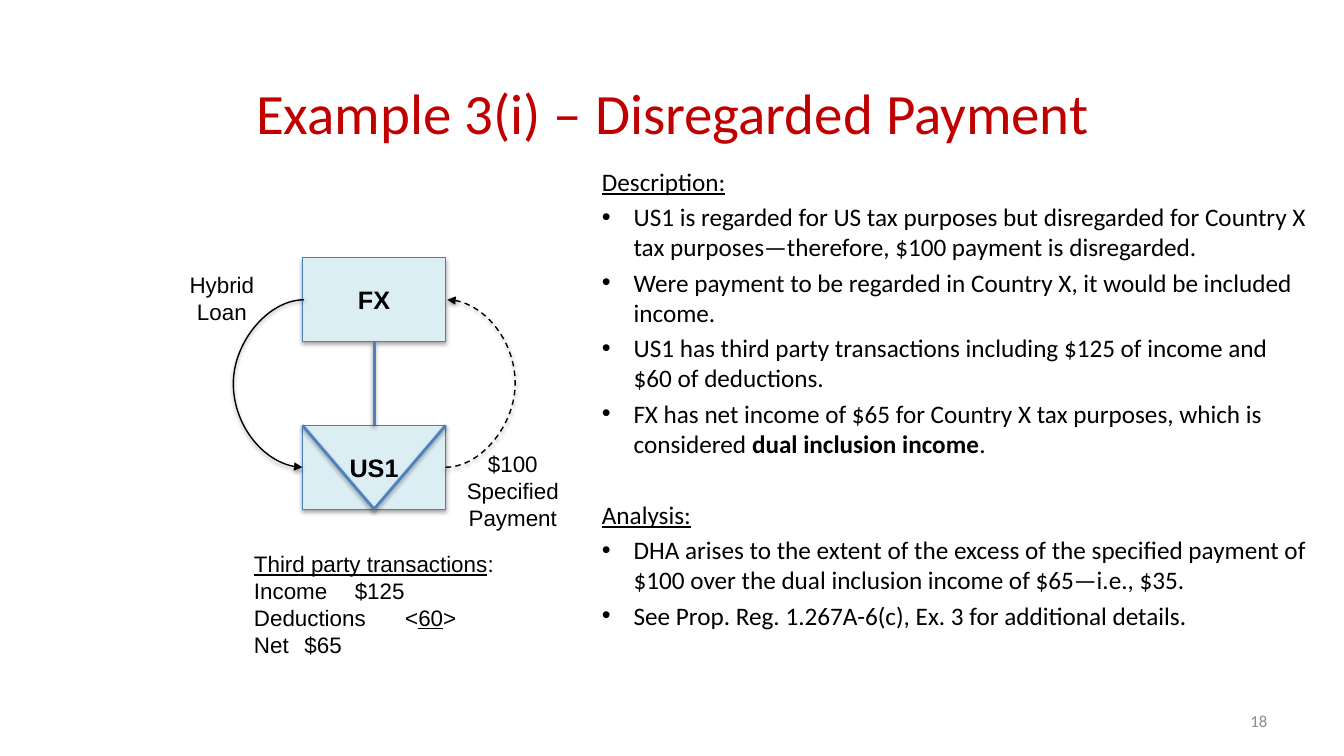
from dataclasses import dataclass

from lxml import etree
from pptx import Presentation
from pptx.dml.color import RGBColor
from pptx.enum import dml, shapes, text
from pptx.oxml import ns
from pptx.util import Cm, Pt

INK, RED, GREY = "000000", "C00000", "8C8C8C"
BLUE, EDGE, PALE = "4F81BD", "4B7EBC", "DBEEF4"
LEFT, MID, RIGHT = text.PP_ALIGN.LEFT, text.PP_ALIGN.CENTER, text.PP_ALIGN.RIGHT
TOP, HALF = text.MSO_ANCHOR.TOP, text.MSO_ANCHOR.MIDDLE


@dataclass
class Para:
    """Paragraph text; _x_ underlines x and *x* makes it bold."""
    words: str
    bullet: bool = False
    before: float = 0
    tab: float = 0


@dataclass
class Style:
    face: str = "Arial"
    size: float = 16
    tone: str = INK
    bold: bool = False
    align: text.PP_ALIGN = MID
    anchor: text.MSO_ANCHOR = TOP


@dataclass
class Label:
    area: tuple
    paras: list
    style: Style


@dataclass
class Link:
    start: tuple
    end: tuple
    tone: str = BLUE
    width: float = 2
    swing: float = 0
    dash: bool = False


def color(code: str) -> RGBColor:
    return RGBColor.from_string(code)


def add(parent, tag: str, **attrs):
    node = etree.SubElement(parent, ns.qn(tag))
    for key, value in attrs.items():
        node.set(key, str(value))
    return node


def shade(shape, alpha: int, dist: float) -> None:
    spot = add(add(shape.element.spPr, "a:effectLst"), "a:outerShdw",
               blurRad=Pt(3.1), dist=Pt(dist), dir=90 * 60000, rotWithShape=0)
    add(add(spot, "a:srgbClr", val=INK), "a:alpha", val=alpha * 1000)


def write(frame, paras: list, style: Style) -> None:
    frame.word_wrap = True
    frame.auto_size = text.MSO_AUTO_SIZE.NONE
    frame.vertical_anchor = style.anchor
    for i, item in enumerate(paras):
        para = frame.add_paragraph() if i else frame.paragraphs[0]
        para.alignment = style.align
        para.space_before = Pt(item.before)
        props = para._p.get_or_add_pPr()
        props.set("marL", str(Cm(0.8 if item.bullet else 0)))
        props.set("indent", str(Cm(-0.8 if item.bullet else 0)))
        if item.bullet:
            add(props, "a:buFont", typeface="Arial")
            add(props, "a:buChar", char="•")
        else:
            add(props, "a:buNone")
        if item.tab:
            add(add(props, "a:tabLst"), "a:tab", pos=Cm(item.tab), algn="l")
        font = para.font
        font.name, font.size, font.bold = style.face, Pt(style.size), style.bold
        font.color.rgb = color(style.tone)
        # Odd pieces lie between a pair of marks
        mark = "*" if "*" in item.words else "_"
        for k, piece in enumerate(item.words.split(mark)):
            if piece:
                run = para.add_run()
                run.text = piece
                if k % 2 and mark == "*":
                    run.font.bold = True
                elif k % 2:
                    run.font.underline = True


def place(shape, area: tuple) -> None:
    shape.left, shape.top, shape.width, shape.height = map(Cm, area)


def label(slide, item: Label) -> None:
    box = slide.shapes.add_textbox(*map(Cm, item.area))
    write(box.text_frame, item.paras, item.style)


def entity(slide, name: str, area: tuple) -> None:
    box = slide.shapes.add_shape(shapes.MSO_SHAPE.RECTANGLE, *map(Cm, area))
    box.fill.solid()
    box.fill.fore_color.rgb = color(PALE)
    box.line.color.rgb = color(EDGE)
    box.line.width = Pt(0.75)
    shade(box, 35, 1.8)
    write(box.text_frame, [Para(name)], Style(size=18, bold=True, anchor=HALF))


def link(slide, item: Link) -> None:
    kind = shapes.MSO_CONNECTOR.CURVE if item.swing else shapes.MSO_CONNECTOR.STRAIGHT
    line = slide.shapes.add_connector(kind, *map(Cm, item.start + item.end))
    line.line.color.rgb = color(item.tone)
    line.line.width = Pt(item.width)
    if item.dash:
        line.line.dash_style = dml.MSO_LINE.DASH
    if item.swing:
        ratio = item.swing / abs(item.end[0] - item.start[0])
        shape = line.element.spPr.find(ns.qn("a:prstGeom"))
        add(shape.find(ns.qn("a:avLst")), "a:gd", name="adj1",
            fmla=f"val {round(ratio * 100000)}")
        add(line.line._get_or_add_ln(), "a:tailEnd", type="triangle")
    shade(line, 38, 1.6)


def main() -> None:
    deck = Presentation()
    deck.slide_width, deck.slide_height = Cm(33.86), Cm(19.05)
    slide = deck.slides.add_slide(deck.slide_layouts[1])
    title, body = slide.placeholders

    # Title and list
    place(title, (5.51, 1.68, 22.86, 2.26))
    write(title.text_frame, [Para("Example 3(i) – Disregarded Payment")],
          Style("Calibri", 40.7, RED, anchor=HALF))
    place(body, (14.91, 4.06, 18.36, 12.57))
    gap = 3.6
    write(body.text_frame, [
        Para("_Description:_", before=gap),
        Para("US1 is regarded for US tax purposes but disregarded for Country X "
             "tax purposes—therefore, $100 payment is disregarded.", True, gap),
        Para("Were payment to be regarded in Country X, it would be included income.",
             True, gap),
        Para("US1 has third party transactions including $125 of income and "
             "$60 of deductions.", True, gap),
        Para("FX has net income of $65 for Country X tax purposes, which is "
             "considered *dual inclusion income*.", True, gap),
        Para("_Analysis:_", before=29),
        Para("DHA arises to the extent of the excess of the specified payment of "
             "$100 over the dual inclusion income of $65—i.e., $35.", True, gap),
        Para("See Prop. Reg. 1.267A-6(c), Ex. 3 for additional details.", True, gap),
    ], Style("Calibri", 18, align=LEFT))

    # Entities: the gap between them equals their height
    x, y, w, h = 7.62, 6.5, 3.61, 2.11
    low, mid, far = y + 2 * h, x + w / 2, x + w
    entity(slide, "FX", (x, y, w, h))
    entity(slide, "US1", (x, low, w, h))

    # Ownership line, wedge in US1, loan and payment arrows
    tip, nib = (mid, low + h), 0.04
    for item in (
        Link((mid, y + h), (mid, low)),
        Link((x, low), tip),
        Link((far, low), tip),
        Link((x + nib, y + h / 2), (x, low + h / 2), INK, 1, 1.78),
        Link((far, low + h / 2), (far + nib, y + h / 2), INK, 1, 1.75, True),
    ):
        link(slide, item)

    # Labels and page number
    for item in (
        Label((4.32, 6.71, 2.54, 1.63), [Para("Hybrid Loan")], Style()),
        Label((11.23, 11.23, 3.38, 2.31),
              [Para("$100"), Para("Specified Payment")], Style()),
        Label((6.15, 13.74, 7.42, 3), [
            Para("_Third party transactions_:"),
            Para("Income\t$125", tab=3.25),
            Para("Deductions\t<_60_>", tab=3.63),
            Para("Net\t$65", tab=3.53),
        ], Style(align=LEFT)),
        Label((24.28, 17.65, 7.9, 1.02), [Para("18")],
              Style("Calibri", 12, GREY, align=RIGHT, anchor=HALF)),
    ):
        label(slide, item)

    deck.save("out.pptx")


if __name__ == "__main__":
    main()
